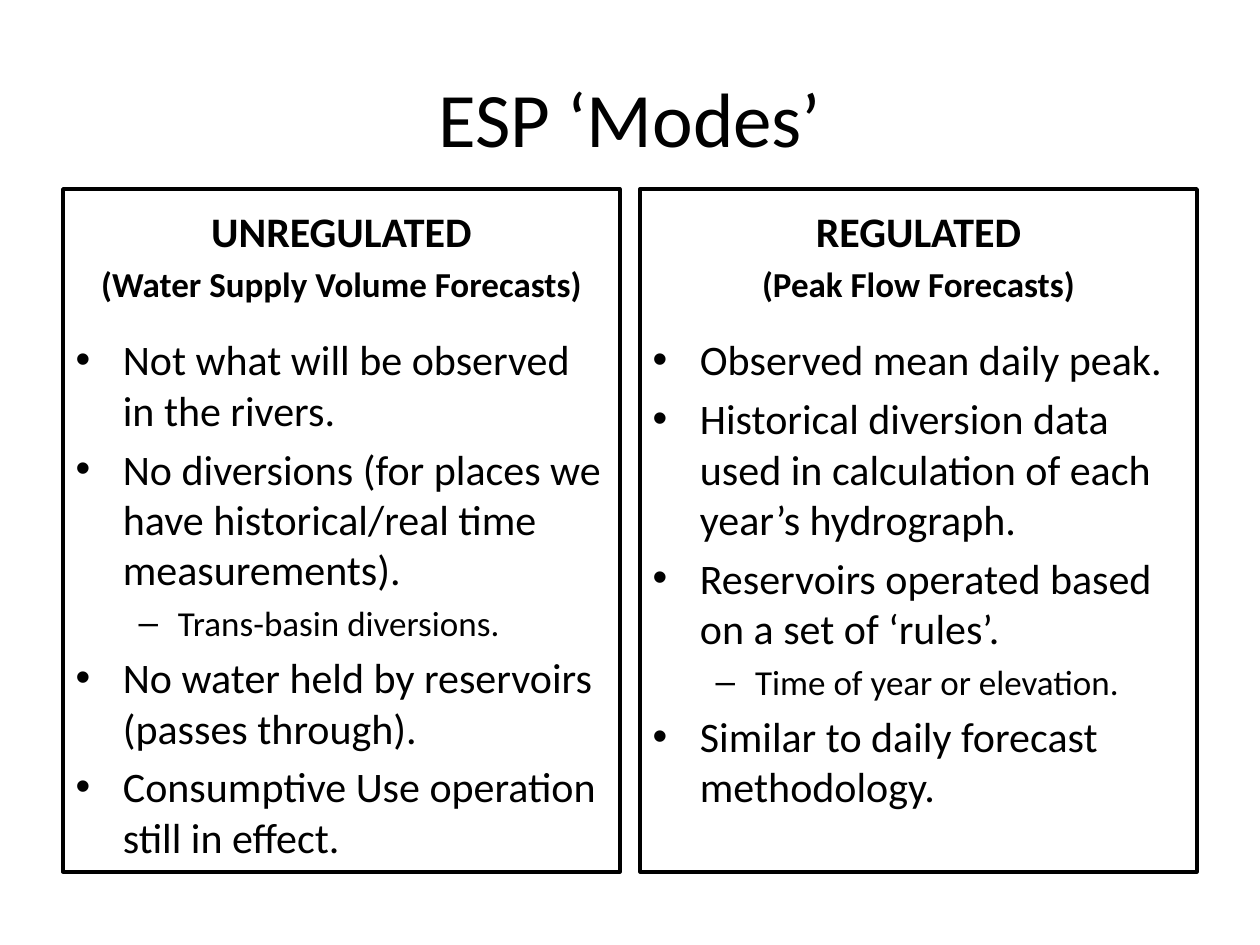
from pptx import Presentation
from pptx.dml.color import RGBColor
from pptx.enum.shapes import MSO_SHAPE
from pptx.enum.text import MSO_ANCHOR, PP_ALIGN
from pptx.util import Inches, Pt

RECTANGLE = MSO_SHAPE.RECTANGLE
CENTER, LEFT = PP_ALIGN.CENTER, PP_ALIGN.LEFT
TOP, MIDDLE, BOTTOM = MSO_ANCHOR.TOP, MSO_ANCHOR.MIDDLE, MSO_ANCHOR.BOTTOM
BLACK = RGBColor(0, 0, 0)
FONT = "Calibri"

# Two-column grid, in inches
SLIDE_WIDTH, SLIDE_HEIGHT = 10, 7.5
MARGIN, GAP = 0.5, 0.16
CONTENT_WIDTH = SLIDE_WIDTH - 2 * MARGIN
COLUMN_WIDTH = (CONTENT_WIDTH - GAP) / 2
HEADING_TOP, HEADING_HEIGHT = 1.47, 1
LIST_TOP, FRAME_TOP, COLUMN_BOTTOM = 2.6, 1.5, 6.92

COMPARISON_LAYOUT = 4
LEVEL_SIZES = (24, 20)

# Heading, subheading, then (level, text) list items
MODES = [
    ("UNREGULATED", "(Water Supply Volume Forecasts)", [
        (0, "Not what will be observed in the rivers."),
        (0, "No diversions (for places we have historical/real time measurements)."),
        (1, "Trans-basin diversions."),
        (0, "No water held by reservoirs (passes through)."),
        (0, "Consumptive Use operation still in effect."),
    ]),
    ("REGULATED", "(Peak Flow Forecasts)", [
        (0, "Observed mean daily peak."),
        (0, "Historical diversion data used in calculation of each year’s hydrograph."),
        (0, "Reservoirs operated based on a set of ‘rules’."),
        (1, "Time of year or elevation."),
        (0, "Similar to daily forecast methodology."),
    ]),
]


def place(shape, left, top, width, height):
    shape.left, shape.top = Inches(left), Inches(top)
    shape.width, shape.height = Inches(width), Inches(height)


def write(paragraph, text, size=24, bold=False, align=LEFT, level=0):
    paragraph.alignment = align
    paragraph.level = level
    run = paragraph.add_run()
    run.text = text
    run.font.name = FONT
    run.font.size = Pt(size)
    run.font.bold = bold
    run.font.color.rgb = BLACK


def fill_placeholder(placeholder, box, lines, anchor):
    """Place a placeholder and write one paragraph per (text, format) pair."""
    place(placeholder, *box)
    frame = placeholder.text_frame
    frame.vertical_anchor = anchor
    for index, (text, text_format) in enumerate(lines):
        paragraph = frame.add_paragraph() if index else frame.paragraphs[0]
        write(paragraph, text, **text_format)


def add_frame(slide, left):
    box = (left, FRAME_TOP, COLUMN_WIDTH, COLUMN_BOTTOM - FRAME_TOP)
    frame = slide.shapes.add_shape(RECTANGLE, *map(Inches, box))
    frame.shadow.inherit = False
    frame.fill.background()
    frame.line.color.rgb = BLACK
    frame.line.width = Pt(2)


def fill_column(heading_holder, list_holder, left, mode):
    heading, subheading, items = mode
    heading_format = {"bold": True, "align": CENTER}
    fill_placeholder(
        heading_holder, (left, HEADING_TOP, COLUMN_WIDTH, HEADING_HEIGHT),
        [(heading, {"size": 24, **heading_format}),
         (subheading, {"size": 20, **heading_format})], BOTTOM)
    fill_placeholder(
        list_holder, (left, LIST_TOP, COLUMN_WIDTH, COLUMN_BOTTOM - LIST_TOP),
        [(text, {"size": LEVEL_SIZES[level], "level": level})
         for level, text in items], TOP)


def main():
    presentation = Presentation()
    presentation.slide_width = Inches(SLIDE_WIDTH)
    presentation.slide_height = Inches(SLIDE_HEIGHT)
    layout = presentation.slide_layouts[COMPARISON_LAYOUT]
    slide = presentation.slides.add_slide(layout)

    # Title
    fill_placeholder(slide.shapes.title, (MARGIN, 0.3, CONTENT_WIDTH, 1.25),
                     [("ESP ‘Modes’", {"size": 44, "align": CENTER})], MIDDLE)

    # One column per mode: heading and list
    lefts = [MARGIN + column * (COLUMN_WIDTH + GAP) for column in range(len(MODES))]
    for column, (left, mode) in enumerate(zip(lefts, MODES)):
        heading_holder = slide.placeholders[2 * column + 1]
        list_holder = slide.placeholders[2 * column + 2]
        fill_column(heading_holder, list_holder, left, mode)

    # Frames around the columns
    for left in lefts:
        add_frame(slide, left)

    presentation.save("out.pptx")


if __name__ == "__main__":
    main()
